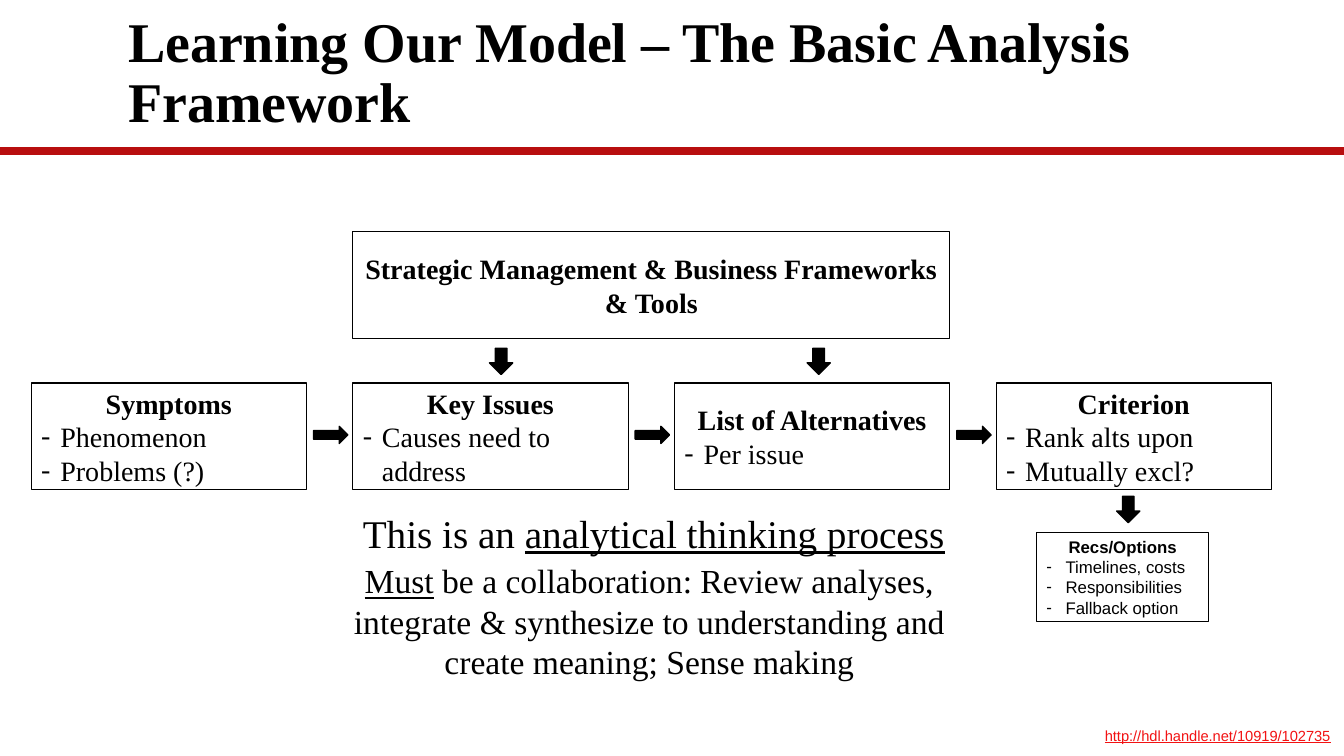
from pptx import Presentation
from pptx.dml.color import RGBColor
from pptx.enum.shapes import MSO_CONNECTOR, MSO_SHAPE
from pptx.enum.text import MSO_ANCHOR, MSO_AUTO_SIZE, PP_ALIGN
from pptx.oxml.ns import qn
from pptx.util import Inches, Pt
from lxml import etree

RECT, ARROW = MSO_SHAPE.RECTANGLE, MSO_SHAPE.RIGHT_ARROW
LEFT, CENTER, MIDDLE = PP_ALIGN.LEFT, PP_ALIGN.CENTER, MSO_ANCHOR.MIDDLE
THEME = {
    "ink": RGBColor(0, 0, 0),
    "rule": RGBColor(0xB8, 0x0E, 0x0F),
    "link": RGBColor(0xF2, 0x12, 0x13),
    "serif": "Times New Roman",
    "sans": "Arial",
    "title": 40, "lead": 28, "body": 24, "box": 20, "small": 12, "url": 10.5,
}
INK, SERIF, SANS = THEME["ink"], THEME["serif"], THEME["sans"]

# Grid: four columns, with a row of boxes below the tools box
EDGE, PITCH, WIDE, HIGH = 0.31, 3.19, 2.73, 1.06
COLS = [EDGE + PITCH * i for i in range(4)]
TOP, ROW = 2.3, 3.8

deck = Presentation()
deck.slide_width, deck.slide_height = Inches(13.33), Inches(7.5)
slide = deck.slides.add_slide(deck.slide_layouts[5])
shapes = slide.shapes


def write(para, parts, size, face=SERIF, bold=False, align=LEFT, color=INK):
    """Fill a paragraph with (text, underlined) parts."""
    para.alignment = align
    for text, under in parts:
        run = para.add_run()
        run.text = text
        font = run.font
        font.size, font.name, font.bold = Pt(size), face, bold
        font.underline = under
        font.color.rgb = color


def add_box(x, y, w, h, head, items=(), size=THEME["box"], face=SERIF):
    """Draw an outlined box with a bold heading and dashed items."""
    box = shapes.add_shape(RECT, Inches(x), Inches(y), Inches(w), Inches(h))
    box.shadow.inherit = False
    box.fill.background()
    box.line.color.rgb, box.line.width = INK, Pt(0.75)
    frame = box.text_frame
    frame.word_wrap, frame.vertical_anchor = True, MIDDLE
    write(frame.paragraphs[0], [(head, False)], size, face, True, CENTER)
    for item in items:
        para = frame.add_paragraph()
        props = para._p.get_or_add_pPr()
        props.set("marL", str(Inches(0.19)))
        props.set("indent", str(-Inches(0.19)))
        tint = etree.SubElement(props, qn("a:buClr"))
        etree.SubElement(tint, qn("a:srgbClr")).set("val", str(INK))
        etree.SubElement(props, qn("a:buFont")).set("typeface", face)
        etree.SubElement(props, qn("a:buChar")).set("char", "-")
        write(para, [(item, False)], size, face)


rule = shapes.add_connector(MSO_CONNECTOR.STRAIGHT, 0, Inches(1.5),
                            deck.slide_width, Inches(1.5))
rule.line.color.rgb, rule.line.width = THEME["rule"], Pt(6)
etree.SubElement(rule._element.spPr, qn("a:effectLst"))

title = shapes.title
title.left, title.top = Inches(1.17), Inches(0.14)
title.width, title.height = Inches(11), Inches(1.2)
frame = title.text_frame
frame.word_wrap, frame.vertical_anchor = True, MIDDLE
frame.auto_size = MSO_AUTO_SIZE.NONE
frame.paragraphs[0].line_spacing = 0.9
write(frame.paragraphs[0],
      [("Learning Our Model – The Basic Analysis Framework", False)],
      THEME["title"], bold=True)

add_box(COLS[1], TOP, PITCH + WIDE, HIGH,
        "Strategic Management & Business Frameworks & Tools")
steps = [
    ("Symptoms", ["Phenomenon", "Problems (?)"]),
    ("Key Issues", ["Causes need to address"]),
    ("List of Alternatives", ["Per issue"]),
    ("Criterion", ["Rank alts upon", "Mutually excl?"]),
]
for x, (head, items) in zip(COLS, steps):
    add_box(x, ROW, WIDE, HIGH, head, items)
add_box(10.28, 5.28, 1.71, 0.89, "Recs/Options",
        ["Timelines, costs", "Responsibilities", "Fallback option"],
        THEME["small"], SANS)

across = [(x + WIDE + 0.07, 4.23, 0.34, 0.17, 0) for x in COLS[:3]]
down = [(x, y, 0.26, 0.23, 90)
        for x, y in ((4.84, 3.47), (7.99, 3.47), (11.06, 4.94))]
for x, y, w, h, turn in across + down:
    arrow = shapes.add_shape(ARROW, Inches(x), Inches(y), Inches(w), Inches(h))
    arrow.rotation = turn
    arrow.shadow.inherit = False
    arrow.fill.solid()
    arrow.fill.fore_color.rgb = INK
    arrow.line.color.rgb, arrow.line.width = INK, Pt(1)

notes = [
    (3.5, 5, 6.61, 0.57, 0.05, LEFT, THEME["lead"], SERIF, INK,
     [("This is an ", False), ("analytical thinking process", True)]),
    (3, 5.51, 6.88, 1.31, 0.05, CENTER, THEME["body"], SERIF, INK,
     [("Must", True), (" be a collaboration: Review analyses, integrate & "
      "synthesize to understanding and create meaning; Sense making", False)]),
    (10.86, 7.12, 2.47, 0.38, 0.1, LEFT, THEME["url"], SANS, THEME["link"],
     [("http://hdl.handle.net/10919/102735", True)]),
]
for x, y, w, h, pad, align, size, face, color, parts in notes:
    note = shapes.add_textbox(Inches(x), Inches(y), Inches(w), Inches(h))
    frame = note.text_frame
    frame.word_wrap = True
    frame.margin_top = frame.margin_bottom = Inches(pad)
    write(frame.paragraphs[0], parts, size, face, align=align, color=color)

deck.save("out.pptx")
